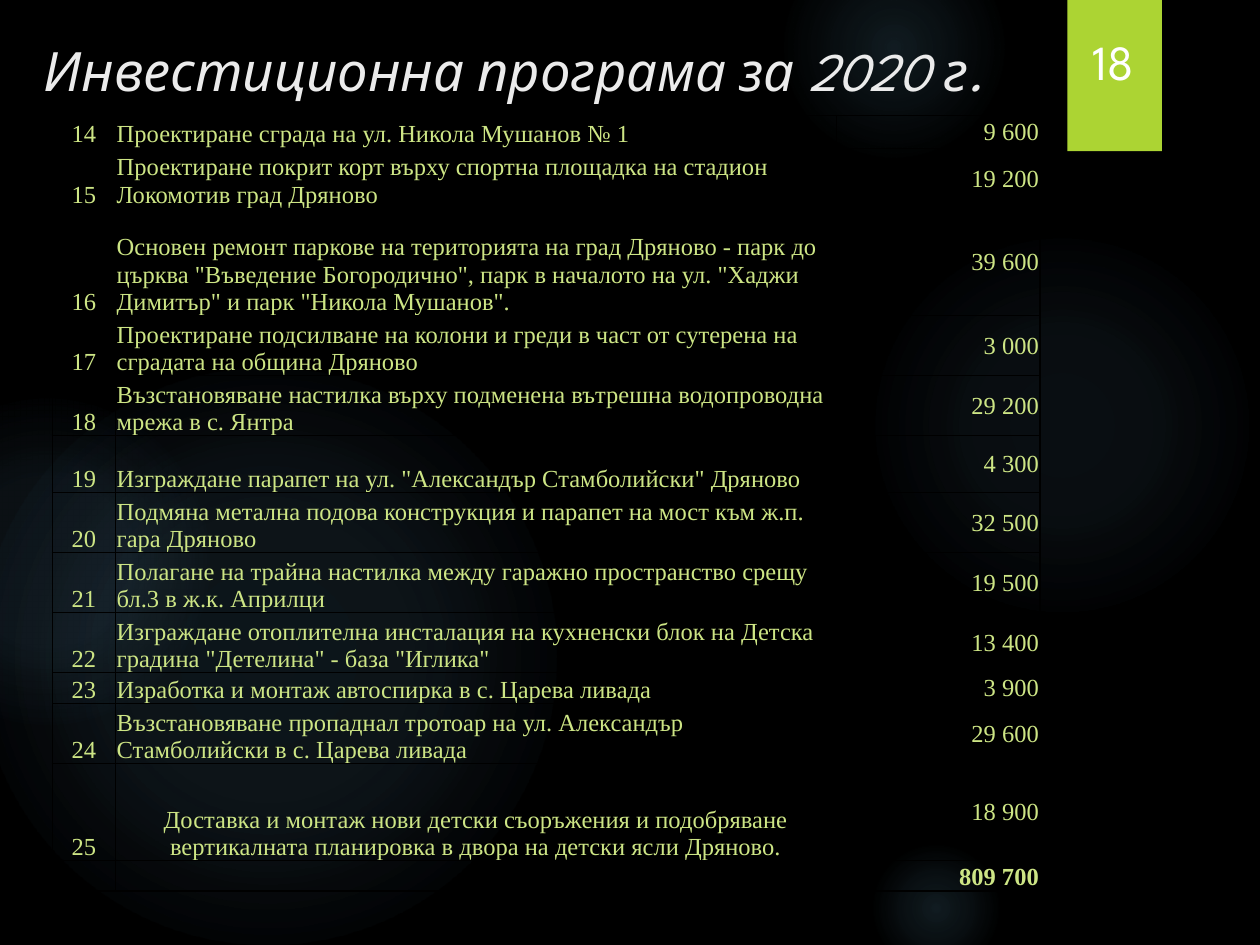
"""Build the 2020 investment programme slide."""
from lxml.etree import SubElement
from pptx import Presentation
from pptx.dml.color import RGBColor
from pptx.enum.shapes import MSO_SHAPE
from pptx.enum.text import MSO_ANCHOR, PP_ALIGN
from pptx.oxml.ns import qn
from pptx.util import Pt

COLORS = {"background": "000000", "glow": "7AC4F0", "tab": "ACD433", "title": "EBEBEB",
          "number": "FFFFFF", "body": "CDE585", "border": "000000"}
HEADING_FONT = "League Spartan"
BODY_FONT = "Times New Roman"
BODY_SIZE = 14


def write_text(frame, text, size, font, color, align=PP_ALIGN.LEFT, bold=False, italic=False):
    paragraph = frame.paragraphs[0]
    paragraph.alignment = align
    if not text:
        SubElement(paragraph._p, qn("a:endParaRPr"), sz=str(size * 100))
        return
    run = paragraph.add_run()
    run.text = text
    run.font.size = Pt(size)
    run.font.name = font
    run.font.bold = bold
    run.font.italic = italic
    run.font.color.rgb = RGBColor.from_string(COLORS[color])


presentation = Presentation()
presentation.slide_width = Pt(720)
presentation.slide_height = Pt(540)
slide = presentation.slides.add_slide(presentation.slide_layouts[6])
slide.background.fill.solid()
slide.background.fill.fore_color.rgb = RGBColor.from_string(COLORS["background"])

# left, top, diameter, gradient stops as (position, opacity) in percent
glows = [
    (496, 132, 222, [(0, 7), (36, 6), (69, 0)]),
    (448, -36, 126, [(0, 14), (36, 7), (73, 0)]),
    (496, 480, 78, [(0, 14), (36, 7), (66, 0)]),
    (-12, 210, 330, [(0, 11), (36, 10), (75, 0)]),
    (-66, 228, 186, [(0, 8), (36, 8), (72, 0)]),
]
for left, top, diameter, stops in glows:
    glow = slide.shapes.add_shape(MSO_SHAPE.OVAL, Pt(left), Pt(top), Pt(diameter), Pt(diameter))
    glow.shadow.inherit = False
    glow.line.fill.background()
    glow.fill.gradient()
    gradient = glow._element.spPr.find(qn("a:gradFill"))
    for child in list(gradient):
        gradient.remove(child)
    stop_list = SubElement(gradient, qn("a:gsLst"))
    for position, opacity in stops:
        stop = SubElement(stop_list, qn("a:gs"), pos=str(position * 1000))
        color = SubElement(stop, qn("a:srgbClr"), val=COLORS["glow"])
        SubElement(color, qn("a:alpha"), val=str(opacity * 1000))
    circle = SubElement(gradient, qn("a:path"), path="circle")
    SubElement(circle, qn("a:fillToRect"), l="50000", t="50000", r="50000", b="50000")

tab = slide.shapes.add_shape(MSO_SHAPE.RECTANGLE, Pt(610), Pt(0), Pt(54), Pt(86.4))
tab.shadow.inherit = False
tab.line.fill.background()
tab.fill.solid()
tab.fill.fore_color.rgb = RGBColor.from_string(COLORS["tab"])

title = slide.shapes.add_textbox(Pt(18), Pt(18), Pt(648), Pt(60)).text_frame
title.word_wrap = True
write_text(title, "Инвестиционна програма за 2020 г.", 31, HEADING_FONT, "title", italic=True)

number = slide.shapes.add_textbox(Pt(552), Pt(18), Pt(168), Pt(37.4)).text_frame
number.word_wrap = True
number.vertical_anchor = MSO_ANCHOR.BOTTOM
write_text(number, "18", 28, HEADING_FONT, "number", align=PP_ALIGN.CENTER)

# row height, number, project, amount
projects = [
    (18.7, "14", "Проектиране сграда на ул. Никола Мушанов № 1", "9 600"),
    (33.8, "15", "Проектиране покрит корт върху спортна площадка на стадион Локомотив град Дряново",
     "19 200"),
    (61.2, "16", 'Основен ремонт паркове на територията на град Дряново - парк до църква "Въведение '
     'Богородично", парк в началото на ул. "Хаджи Димитър" и парк "Никола Мушанов".', "39 600"),
    (33.4, "17", "Проектиране подсилване на колони и греди в част от сутерена на сградата на община "
     "Дряново", "3 000"),
    (32.4, "18", "Възстановяване настилка върху подменена вътрешна водопроводна мрежа в с. Янтра",
     "29 200"),
    (32.4, "19", 'Изграждане парапет на ул. "Александър Стамболийски" Дряново', "4 300"),
    (32.4, "20", "Подмяна метална подова конструкция и парапет на мост към ж.п. гара Дряново",
     "32 500"),
    (32.4, "21", "Полагане на трайна настилка между гаражно пространство срещу бл.3 в ж.к. Априлци",
     "19 500"),
    (32.4, "22", 'Изграждане отоплителна инсталация на кухненски блок на Детска градина "Детелина" - '
     'база "Иглика"', "13 400"),
    (17.2, "23", "Изработка и монтаж автоспирка в с. Царева ливада", "3 900"),
    (33.8, "24", "Възстановяване пропаднал тротоар на ул. Александър Стамболийски в с. Царева ливада",
     "29 600"),
    (55.4, "25", "Доставка и монтаж нови детски съоръжения и подобряване вертикалната планировка в "
     "двора на детски ясли Дряново.", "18 900"),
    (17.2, "", "", "809 700"),
]
column_widths = [36, 411.8, 116.6]
alignments = [PP_ALIGN.CENTER, PP_ALIGN.LEFT, PP_ALIGN.RIGHT]
last_row = len(projects) - 1
last_column = len(column_widths) - 1

table = slide.shapes.add_table(len(projects), len(column_widths), Pt(30), Pt(66),
                               Pt(sum(column_widths)), Pt(sum(row[0] for row in projects))).table
table.first_row = False
table.horz_banding = False
for column, width in zip(table.columns, column_widths):
    column.width = Pt(width)

for row_index, (height, *values) in enumerate(projects):
    table.rows[row_index].height = Pt(height)
    for column_index, value in enumerate(values):
        cell = table.cell(row_index, column_index)
        cell.margin_left = cell.margin_right = cell.margin_top = Pt(0.72)
        cell.margin_bottom = Pt(0)
        is_total = row_index == last_row
        is_amount = column_index == last_column
        cell.vertical_anchor = MSO_ANCHOR.MIDDLE if is_amount and not is_total else MSO_ANCHOR.BOTTOM
        centred = values[0] == "25" and column_index == 1
        write_text(cell.text_frame, value, BODY_SIZE, BODY_FONT, "body", bold=is_total,
                   align=PP_ALIGN.CENTER if centred else alignments[column_index])
        outer_edges = {"lnL": column_index == 0, "lnR": is_amount, "lnT": False, "lnB": is_total}
        properties = cell._tc.get_or_add_tcPr()
        for edge, is_outer in outer_edges.items():
            border = SubElement(properties, qn(f"a:{edge}"), w=str(Pt(1 if is_outer else 0.5)))
            fill = SubElement(border, qn("a:solidFill"))
            SubElement(fill, qn("a:srgbClr"), val=COLORS["border"])
        cell.fill.background()

presentation.save("out.pptx")
